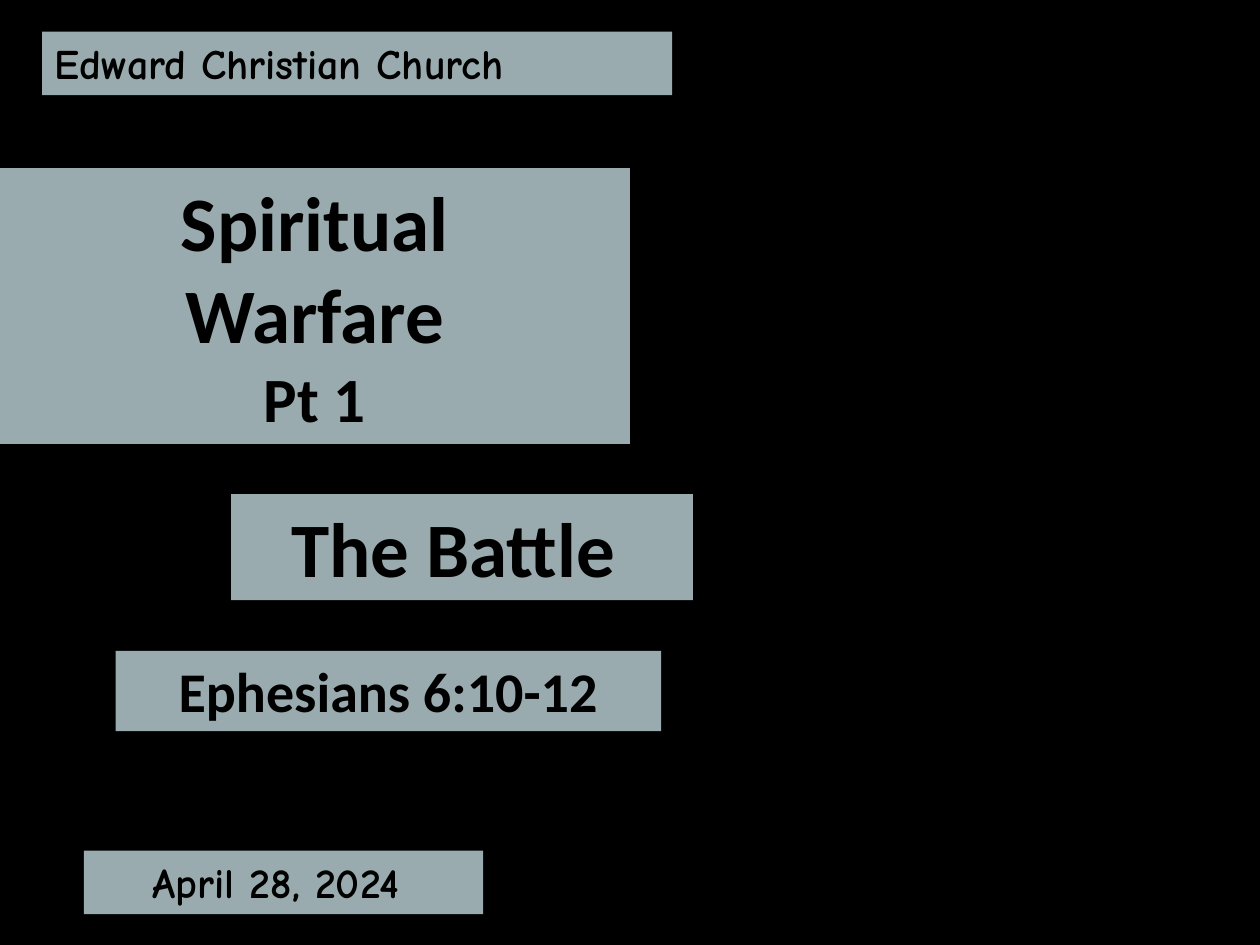
import pptx
import pptx.dml.color
import pptx.enum.shapes
import pptx.enum.text
import pptx.oxml.ns
import pptx.util
from lxml import etree
from pptx.util import Cm

COLORS = {"background": "000000", "panel": "DBF5F9", "text": "000000"}
PANEL_OPACITY = 70


class TitleSlide:
    def __init__(self, prs):
        self.s = prs.slides.add_slide(prs.slide_layouts[6])
        self.fill(self.s.background, "background")

    def color(self, name):
        return pptx.dml.color.RGBColor.from_string(COLORS[name])

    def fill(self, target, name):
        target.fill.solid()
        target.fill.fore_color.rgb = self.color(name)

    def panel(self, left, top, width, height, lines, font, sizes, centered=True):
        sp = self.s.shapes.add_shape(
            pptx.enum.shapes.MSO_SHAPE.RECTANGLE,
            Cm(left), Cm(top), Cm(width), Cm(height))
        sp.shadow.inherit = False
        sp.line.fill.background()
        self.fill(sp, "panel")
        qn = pptx.oxml.ns.qn
        rgb = sp.fill._xPr.find(qn("a:solidFill")).find(qn("a:srgbClr"))
        etree.SubElement(rgb, qn("a:alpha"), val=str(PANEL_OPACITY * 1000))

        tf = sp.text_frame
        tf.word_wrap = True
        tf.auto_size = pptx.enum.text.MSO_AUTO_SIZE.SHAPE_TO_FIT_TEXT
        tf.vertical_anchor = pptx.enum.text.MSO_ANCHOR.TOP
        tf.text = "\n".join(lines)
        align = pptx.enum.text.PP_ALIGN
        for p, size in zip(tf.paragraphs, sizes):
            p.alignment = align.CENTER if centered else align.LEFT
            for r in p.runs:
                r.font.name = font
                r.font.size = pptx.util.Pt(size)
                r.font.bold = True
                r.font.color.rgb = self.color("text")


def main():
    prs = pptx.Presentation()
    prs.slide_width, prs.slide_height = Cm(25.4), Cm(19.05)
    slide = TitleSlide(prs)
    slide.panel(0.85, 0.64, 12.7, 1.28, ["Edward Christian Church"],
                "Comic Neue", [24], centered=False)
    slide.panel(1.69, 17.15, 8.05, 1.28, ["April 28, 2024 "], "Comic Neue", [24])
    slide.panel(2.33, 13.12, 11, 1.62, ["Ephesians 6:10-12"], "Calibri", [32])
    slide.panel(0, 3.39, 12.7, 5.56, ["Spiritual", "Warfare", "Pt 1"],
                "Calibri", [44, 44, 36])
    slide.panel(4.66, 9.96, 9.31, 2.14, ["The Battle "], "Calibri", [44])
    prs.save("out.pptx")


if __name__ == "__main__":
    main()
